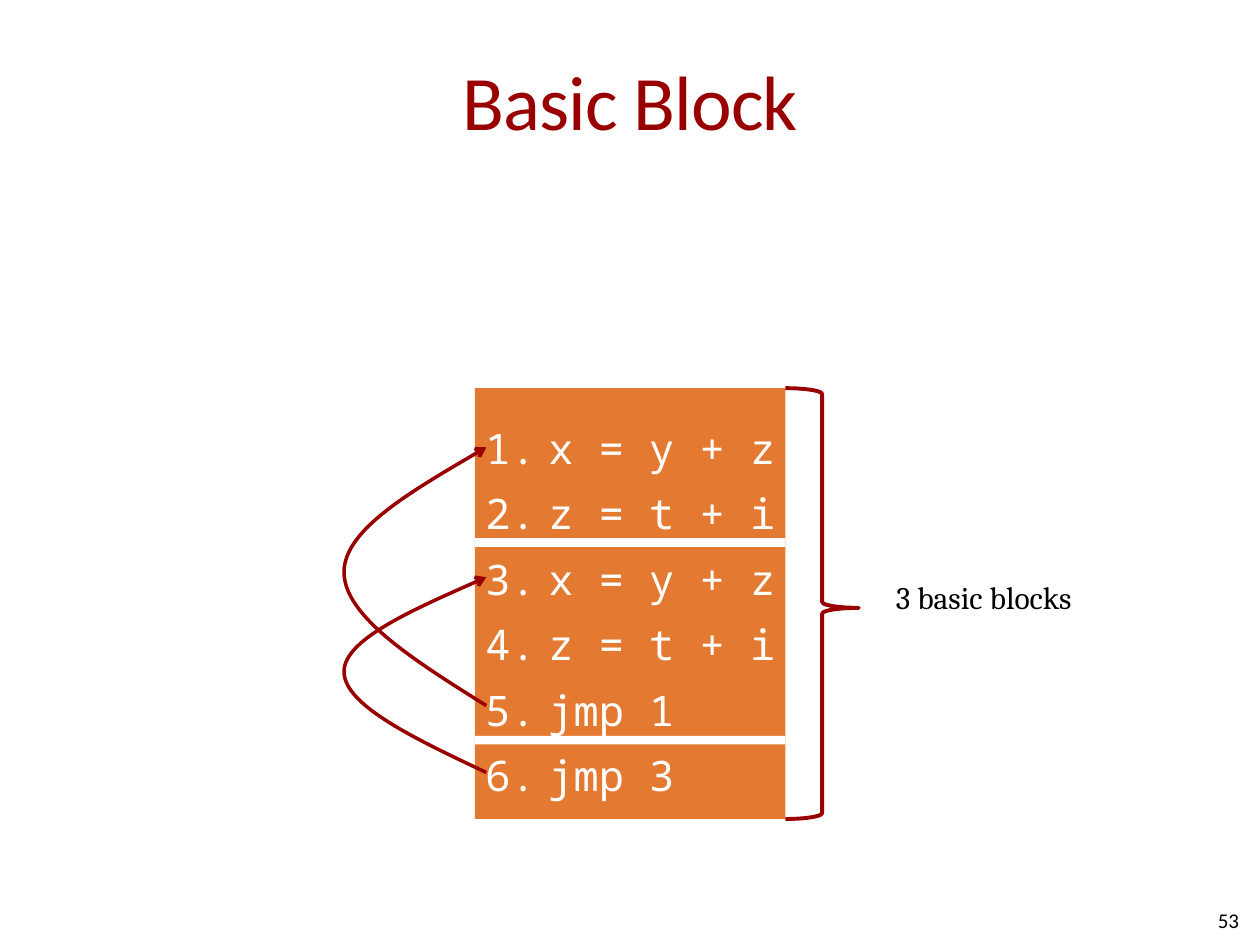
from lxml import etree
from pptx import Presentation
from pptx.dml.color import RGBColor
from pptx.enum.shapes import MSO_SHAPE
from pptx.enum.text import MSO_ANCHOR, PP_ALIGN
from pptx.oxml.ns import qn
from pptx.util import Pt

RECTANGLE = MSO_SHAPE.RECTANGLE
RIGHT_BRACE = MSO_SHAPE.RIGHT_BRACE
MIDDLE = MSO_ANCHOR.MIDDLE
TOP = MSO_ANCHOR.TOP
LEFT, CENTER, RIGHT = PP_ALIGN.LEFT, PP_ALIGN.CENTER, PP_ALIGN.RIGHT

COLORS = {"accent": "990000", "code": "E47932", "paper": "FFFFFF", "ink": "000000"}
CODE_LINES = ["x = y + z", "z = t + i", "x = y + z", "z = t + i", "jmp 1", "jmp 3"]
BLOCK_LEFT, BLOCK_TOP, BLOCK_WIDTH, BLOCK_HEIGHT = 271.4, 221.8, 177.4, 246.2
GAP_TOPS = [307.5, 420.5]
JUMPS = [(403.2, 326.9, 255.6), (441.4, 383.8, 329.8)]
JUMP_NEAR, JUMP_FAR = 277.9, 196.6


def color(name):
    return RGBColor.from_string(COLORS[name])


def box(*lengths):
    return [Pt(length) for length in lengths]


def format_text(frame, font, size, color_name, align, anchor, wrap=True):
    frame.word_wrap = wrap
    frame.vertical_anchor = anchor
    frame.margin_left = frame.margin_right = 0
    frame.margin_top = frame.margin_bottom = 0
    for paragraph in frame.paragraphs:
        paragraph.alignment = align
        for run in paragraph.runs:
            run.font.name = font
            run.font.size = Pt(size)
            run.font.color.rgb = color(color_name)


def add_title(slide, text):
    title = slide.shapes.title
    title.left, title.top, title.width, title.height = box(36, 12.2, 648, 90)
    title.text_frame.text = text
    format_text(title.text_frame, "Calibri", 44, "accent", CENTER, MIDDLE)
    title.text_frame.paragraphs[0].runs[0].font._element.set("spc", "-50")


def add_label(shapes, text, place, font, size, align, anchor, wrap):
    label = shapes.add_textbox(*box(*place))
    label.text_frame.text = text
    format_text(label.text_frame, font, size, "ink", align, anchor, wrap)


def add_bar(slide, top, height, fill):
    bar = slide.shapes.add_shape(RECTANGLE, *box(BLOCK_LEFT, top, BLOCK_WIDTH, height))
    bar.shadow.inherit = False
    bar.fill.solid()
    bar.fill.fore_color.rgb = color(fill)
    bar.line.fill.background()
    return bar


def number_paragraph(paragraph):
    paragraph.line_spacing = 1.3
    properties = paragraph._p.get_or_add_pPr()
    properties.set("marL", str(Pt(36)))
    properties.set("indent", str(-Pt(36)))
    bullet_color = etree.SubElement(properties, qn("a:buClr"))
    etree.SubElement(bullet_color, qn("a:srgbClr"), val=COLORS["paper"])
    etree.SubElement(properties, qn("a:buAutoNum"), type="arabicPeriod")


def add_code(slide):
    frame = add_bar(slide, BLOCK_TOP, BLOCK_HEIGHT, "code").text_frame
    frame.text = "\n".join(CODE_LINES)
    format_text(frame, "Noto Sans Mono", 24, "paper", LEFT, MIDDLE)
    frame.margin_left = Pt(6)
    for paragraph in frame.paragraphs:
        number_paragraph(paragraph)


def style_line(shape, width):
    shape.shadow.inherit = False
    shape.fill.background()
    shape.line.color.rgb = color("accent")
    shape.line.width = Pt(width)


def curve_segments(shape):
    outline = next(shape._element.iter(qn("a:path")))
    segments = outline.findall(qn("a:lnTo"))
    for start in range(0, len(segments), 3):
        curve = etree.SubElement(outline, qn("a:cubicBezTo"))
        for segment in segments[start:start + 3]:
            curve.append(segment[0])
            outline.remove(segment)


def add_jump(slide, start, bend, end):
    middle = (JUMP_NEAR + JUMP_FAR) / 2
    out = (bend - start) / 3
    back = (end - bend) / 3
    points = [
        (middle, start + out), (JUMP_FAR, start + 2 * out), (JUMP_FAR, bend),
        (JUMP_FAR, bend + back), (middle, bend + 2 * back), (JUMP_NEAR, end),
    ]
    builder = slide.shapes.build_freeform(Pt(JUMP_NEAR), Pt(start))
    builder.add_line_segments([box(*point) for point in points], close=False)
    jump = builder.convert_to_shape()
    curve_segments(jump)
    style_line(jump, 2)
    etree.SubElement(jump.line._get_or_add_ln(), qn("a:tailEnd"), type="arrow")


def add_block_count(slide, text):
    group = slide.shapes.add_group_shape()
    place = box(BLOCK_LEFT + BLOCK_WIDTH, BLOCK_TOP, 42, BLOCK_HEIGHT)
    brace = group.shapes.add_shape(RIGHT_BRACE, *place)
    brace.adjustments[0] = 0.08
    brace.adjustments[1] = 0.51
    style_line(brace, 2.25)
    add_label(group.shapes, text, (511.9, 330.5, 137.5, 28.8),
              "Cambria", 18, LEFT, TOP, False)


def main():
    deck = Presentation()
    deck.slide_width, deck.slide_height = box(720, 540)
    slide = deck.slides.add_slide(deck.slide_layouts[5])
    add_title(slide, "Basic Block")
    add_label(slide.shapes, "53", (540, 511.2, 168, 28.8),
              "Calibri", 12, RIGHT, MIDDLE, True)
    add_code(slide)
    for jump in JUMPS:
        add_jump(slide, *jump)
    for top in GAP_TOPS:
        add_bar(slide, top, 5, "paper")
    add_block_count(slide, "3 basic blocks")
    deck.save("out.pptx")


if __name__ == "__main__":
    main()
